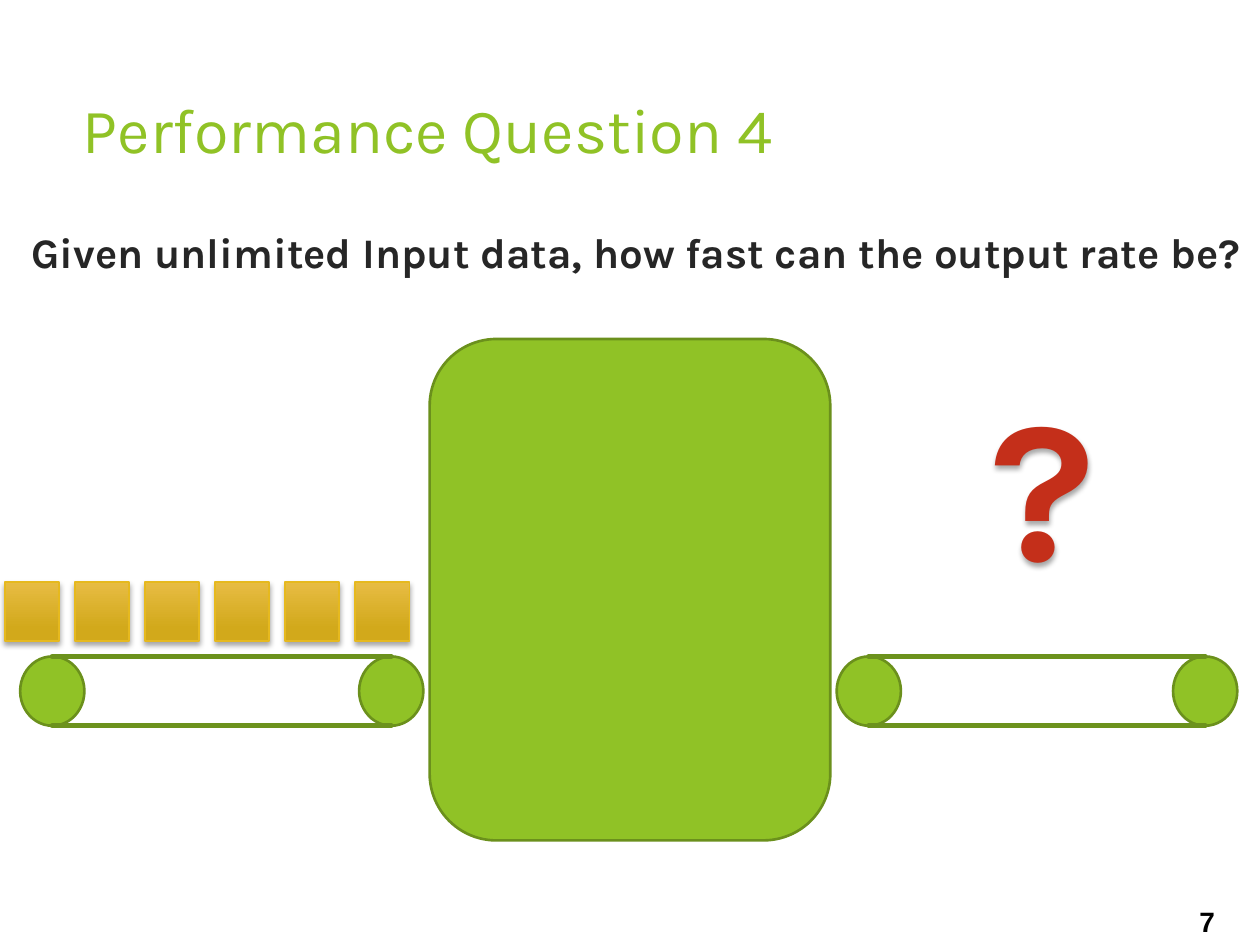
from dataclasses import dataclass

from lxml import etree
from pptx import Presentation
from pptx.dml.color import RGBColor
from pptx.enum.shapes import MSO_CONNECTOR, MSO_SHAPE
from pptx.enum.text import MSO_ANCHOR, MSO_AUTO_SIZE
from pptx.oxml.ns import qn
from pptx.util import Inches, Pt

GREEN = RGBColor(0x90, 0xC2, 0x26)
GREEN_EDGE = RGBColor(0x6B, 0x90, 0x1C)
BELT_GREEN = RGBColor(0x6C, 0x92, 0x1D)
GOLD_TOP = RGBColor(0xE7, 0xBC, 0x43)
GOLD_BOTTOM = RGBColor(0xD2, 0xA9, 0x1B)
GOLD_EDGE = RGBColor(0xE6, 0xB9, 0x1E)
RED = RGBColor(0xC4, 0x2F, 0x1A)
DARK = RGBColor(0x26, 0x26, 0x26)
BLACK = RGBColor(0, 0, 0)

WHEEL_W, WHEEL_H = 0.51, 0.55
BELT_TOP = 5.21
BOX_W, BOX_H, BOX_TOP = 0.43, 0.47, 4.62
BOX_COUNT, FIRST_BOX, LAST_BOX = 6, 0.04, 2.82


@dataclass
class Conveyor:
    left_wheel: float
    right_wheel: float


CONVEYORS = [Conveyor(0.16, 2.85), Conveyor(6.64, 9.31)]


def add_shadow(shape) -> None:
    """Give the shape a soft shadow straight below it."""
    shape.shadow.inherit = False
    effects = shape._element.spPr.find(qn("a:effectLst"))
    shadow = etree.SubElement(effects, qn("a:outerShdw"), blurRad=str(Pt(3)),
                              dist=str(Pt(2)), dir="5400000", rotWithShape="0")
    color = etree.SubElement(shadow, qn("a:srgbClr"), val="000000")
    etree.SubElement(color, qn("a:alpha"), val="35000")


def add_text(s, text: str, x: float, y: float, w: float, h: float, *, size: float,
             color: RGBColor, font: str = "Karla", bold: bool = False,
             wrap: bool = False, spacing: float = 1.0, inset: float | None = None):
    box = s.shapes.add_textbox(Inches(x), Inches(y), Inches(w), Inches(h))
    tf = box.text_frame
    tf.word_wrap = wrap
    tf.auto_size = MSO_AUTO_SIZE.NONE if wrap else MSO_AUTO_SIZE.SHAPE_TO_FIT_TEXT
    tf.vertical_anchor = MSO_ANCHOR.TOP
    if inset is not None:
        tf.margin_left = tf.margin_right = Inches(inset)
        tf.margin_top = tf.margin_bottom = Inches(inset)
    p = tf.paragraphs[0]
    p.line_spacing = spacing
    r = p.add_run()
    r.text = text
    r.font.name, r.font.size, r.font.bold = font, Pt(size), bold
    r.font.color.rgb = color
    return box


def add_green_shape(s, kind: MSO_SHAPE, x: float, y: float, w: float, h: float) -> None:
    sp = s.shapes.add_shape(kind, Inches(x), Inches(y), Inches(w), Inches(h))
    sp.shadow.inherit = False
    sp.fill.solid()
    sp.fill.fore_color.rgb = GREEN
    sp.line.color.rgb = GREEN_EDGE
    sp.line.width = Pt(1.5)


def add_belt_line(s, x1: float, x2: float, y: float) -> None:
    line = s.shapes.add_connector(MSO_CONNECTOR.STRAIGHT, Inches(x1), Inches(y),
                                  Inches(x2), Inches(y))
    line.line.color.rgb = BELT_GREEN
    line.line.width = Pt(3)
    spPr = line._element.spPr
    spPr.find(qn("a:ln")).set("cap", "rnd")
    etree.SubElement(spPr, qn("a:effectLst"))


def add_conveyor(s, conveyor: Conveyor) -> None:
    wheels = (conveyor.left_wheel, conveyor.right_wheel)
    for x in wheels:
        add_green_shape(s, MSO_SHAPE.OVAL, x, BELT_TOP, WHEEL_W, WHEEL_H)
    start, end = (x + WHEEL_W / 2 for x in wheels)
    for y in (BELT_TOP, BELT_TOP + WHEEL_H):
        add_belt_line(s, start, end, y)


def add_data_box(s, x: float) -> None:
    sp = s.shapes.add_shape(MSO_SHAPE.RECTANGLE, Inches(x), Inches(BOX_TOP),
                            Inches(BOX_W), Inches(BOX_H))
    sp.fill.gradient()
    sp.fill.gradient_angle = 270
    stops = ((0, GOLD_TOP), (0.78, GOLD_BOTTOM))
    for stop, (position, color) in zip(sp.fill.gradient_stops, stops):
        stop.position = position
        stop.color.rgb = color
    sp.line.color.rgb = GOLD_EDGE
    sp.line.width = Pt(1)
    add_shadow(sp)


def main() -> None:
    prs = Presentation()
    prs.slide_width, prs.slide_height = Inches(10), Inches(7.5)
    s = prs.slides.add_slide(prs.slide_layouts[6])

    # Page number, title and question
    add_text(s, "7", 9.42, 7.13, 0.47, 0.37, size=16, color=BLACK, font="Arial", bold=True)
    add_text(s, "Performance Question 4", 0.56, 0.67, 7.05, 1.44, size=36,
             color=GREEN, wrap=True)
    add_text(s, "Given unlimited Input data, how fast can the output rate be?",
             0.15, 1.55, 10.11, 0.71, size=24, color=DARK, bold=True, spacing=1.5)

    # Conveyors on both sides of the machine
    for conveyor in CONVEYORS:
        add_conveyor(s, conveyor)
    add_green_shape(s, MSO_SHAPE.ROUNDED_RECTANGLE, 3.41, 2.69, 3.18, 3.98)

    # Input data and unknown output
    pitch = (LAST_BOX - FIRST_BOX) / (BOX_COUNT - 1)
    for i in range(BOX_COUNT):
        add_data_box(s, FIRST_BOX + i * pitch)
    mark = add_text(s, "?", 7.86, 1.89, 0.71, 2.9, size=115, color=RED, bold=True,
                    spacing=1.5, inset=0)
    add_shadow(mark)

    prs.save("out.pptx")


if __name__ == "__main__":
    main()
